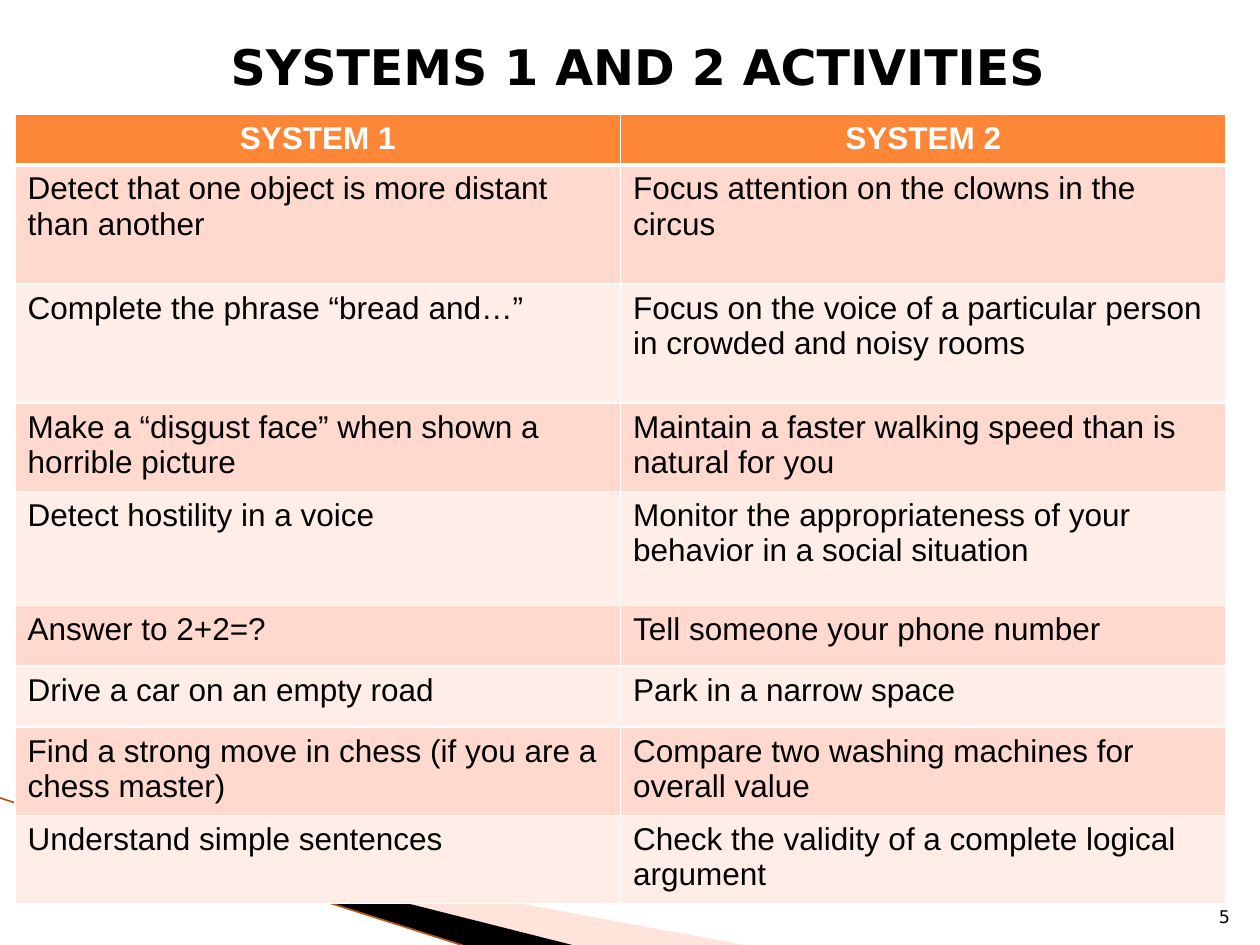
from lxml import etree
from pptx import Presentation
from pptx.dml.color import RGBColor
from pptx.enum.shapes import MSO_CONNECTOR
from pptx.enum.text import MSO_ANCHOR, PP_ALIGN
from pptx.oxml.ns import qn
from pptx.util import Inches, Pt

LEFT, CENTER, RIGHT = PP_ALIGN.LEFT, PP_ALIGN.CENTER, PP_ALIGN.RIGHT
TOP, BOTTOM = MSO_ANCHOR.TOP, MSO_ANCHOR.BOTTOM
STRAIGHT = MSO_CONNECTOR.STRAIGHT
WIDTH, HEIGHT = Inches(10), Inches(7.5)

BLACK, WHITE, ORANGE = "000000", "FFFFFF", "FE8637"
BANDS = ["FFD9CE", "FFEDE8"]
HEADING = "DejaVu Sans"
TITLE_FORMAT = {"name": HEADING, "size": Pt(28), "bold": True}
NUMBER_FORMAT = {"name": HEADING, "size": Pt(10)}
HEADER_FORMAT = {"name": "Arial", "size": Pt(18), "bold": True}
CELL_FORMAT = {"name": "Arial", "size": Pt(18), "bold": False}

ACTIVITIES = [
    ("SYSTEM 1", "SYSTEM 2"),
    ("Detect that one object is more distant than another",
     "Focus attention on the clowns in the circus"),
    ("Complete the phrase “bread and…”",
     "Focus on the voice of a particular person in crowded and noisy rooms"),
    ("Make a “disgust face” when shown a horrible picture",
     "Maintain a faster walking speed than is natural for you"),
    ("Detect hostility in a voice",
     "Monitor the appropriateness of your behavior in a social situation"),
    ("Answer to 2+2=?", "Tell someone your phone number"),
    ("Drive a car on an empty road", "Park in a narrow space"),
    ("Find a strong move in chess (if you are a chess master)",
     "Compare two washing machines for overall value"),
    ("Understand simple sentences",
     "Check the validity of a complete logical argument"),
]
# Row heights in percent of the slide height
ROW_HEIGHTS = [5.0, 12.6, 12.6, 9.27, 12.05, 6.45, 6.45, 9.27, 9.27]


def px(share):
    """Percent of the slide width."""
    return round(WIDTH * share / 100)


def py(share):
    """Percent of the slide height."""
    return round(HEIGHT * share / 100)


def place(left, top, width, height):
    return px(left), py(top), px(width), py(height)


def rgb(value):
    return RGBColor.from_string(value)


def write(tf, text, fmt, color=BLACK, align=LEFT):
    tf.word_wrap = True
    p = tf.paragraphs[0]
    p.alignment = align
    r = p.add_run()
    r.text = text
    for name, value in fmt.items():
        setattr(r.font, name, value)
    r.font.color.rgb = rgb(color)
    return p


def add_text(s, box, text, fmt, align, anchor=TOP):
    tf = s.shapes.add_textbox(*place(*box)).text_frame
    tf.vertical_anchor = anchor
    write(tf, text, fmt, align=align)
    return tf


def add_ribbon(s, points, color, opacity=100):
    corners = [(px(x), py(y)) for x, y in points]
    builder = s.shapes.build_freeform(*corners[0], scale=1.0)
    builder.add_line_segments(corners[1:], close=True)
    sp = builder.convert_to_shape()
    sp.shadow.inherit = False
    sp.fill.solid()
    sp.fill.fore_color.rgb = rgb(color)
    sp.line.fill.background()
    if opacity < 100:
        clr = sp.fill._xPr.find(".//" + qn("a:srgbClr"))
        etree.SubElement(clr, qn("a:alpha"), val=str(opacity * 1000))


def add_line(s, start, end, color, width):
    line = s.shapes.add_connector(
        STRAIGHT, px(start[0]), py(start[1]), px(end[0]), py(end[1]))
    line.line.color.rgb = rgb(color)
    line.line.width = Pt(width)
    etree.SubElement(line._element.spPr, qn("a:effectLst"))


def set_borders(cell, **widths):
    """Draw white cell borders; widths are points keyed by L, R, T and B."""
    tc_pr = cell._tc.get_or_add_tcPr()
    for i, side in enumerate("LRTB"):
        ln = etree.Element(qn("a:ln" + side), w=str(Pt(widths.get(side, 1))))
        fill = etree.SubElement(ln, qn("a:solidFill"))
        etree.SubElement(fill, qn("a:srgbClr"), val=WHITE)
        tc_pr.insert(i, ln)


def add_activity_table(s):
    rows, cols = len(ACTIVITIES), len(ACTIVITIES[0])
    box = place(1.2, 12.13, 96.1, sum(ROW_HEIGHTS))
    table = s.shapes.add_table(rows, cols, *box).table
    for column in table.columns:
        column.width = box[2] // cols
    for i, (row, height) in enumerate(zip(table.rows, ROW_HEIGHTS)):
        row.height = py(height)
        for cell, text in zip(row.cells, ACTIVITIES[i]):
            cell.fill.solid()
            if i == 0:
                cell.fill.fore_color.rgb = rgb(ORANGE)
                write(cell.text_frame, text, HEADER_FORMAT, WHITE, CENTER)
                set_borders(cell, B=3)
            else:
                cell.fill.fore_color.rgb = rgb(BANDS[(i - 1) % 2])
                write(cell.text_frame, text, CELL_FORMAT)
                set_borders(cell, T=3 if i == 1 else 1)


def main():
    prs = Presentation()
    prs.slide_width, prs.slide_height = WIDTH, HEIGHT
    s = prs.slides.add_slide(prs.slide_layouts[6])

    add_ribbon(s, [(5.5, 86.8), (59.5, 100.1), (45.6, 100.1), (5.5, 86.7)],
               "FFBCA5", opacity=40)
    add_ribbon(s, [(5.3, 86.5), (45.7, 100.1), (37.2, 100.2), (5.4, 86.7)],
               BLACK)
    add_line(s, (-0.1, 84.4), (37.1, 100.2), "B5541C", 0.95)

    title = add_text(s, (5, 2.8, 90, 93.5), "SYSTEMS 1 AND 2 ACTIVITIES",
                     TITLE_FORMAT, CENTER)
    title.margin_top = py(1.1)
    title.margin_left = px(2.2)
    add_text(s, (94.6, 93.5, 4, 5.3), "5", NUMBER_FORMAT, RIGHT, BOTTOM)
    add_activity_table(s)

    prs.save("out.pptx")


if __name__ == "__main__":
    main()
